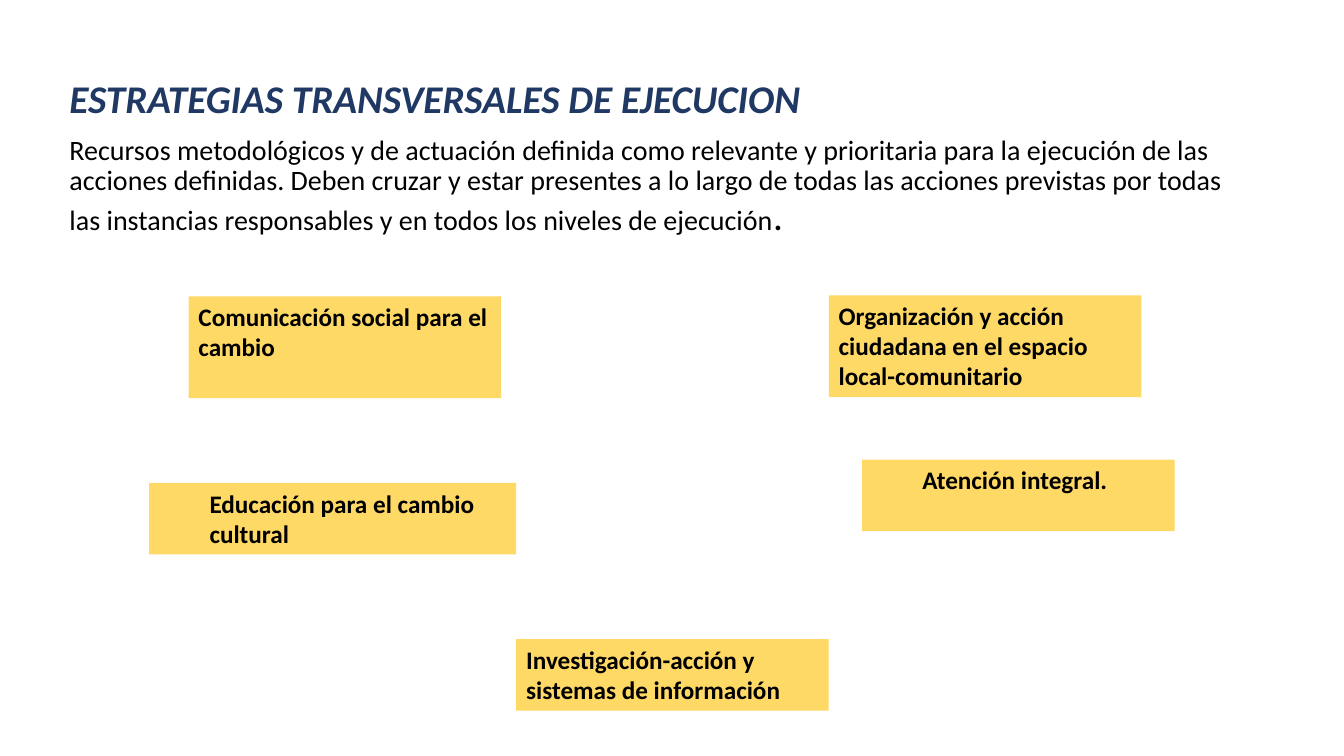
from pptx import Presentation
from pptx.dml.color import RGBColor
from pptx.enum.shapes import MSO_SHAPE
from pptx.enum.text import MSO_ANCHOR, PP_ALIGN
from pptx.util import Pt

PX = 9144  # EMU per px, 100 px to the inch
INDENT = 50
COLORS = {"title": "203864", "text": "000000", "box": "FFD966"}

TITLE = "ESTRATEGIAS TRANSVERSALES DE EJECUCION"
INTRO = (
    "Recursos metodológicos y de actuación definida como relevante y "
    "prioritaria para la ejecución de las acciones definidas. Deben cruzar y "
    "estar presentes a lo largo de todas las acciones previstas por todas las "
    "instancias responsables y en todos los niveles de ejecución"
)
# left, top, width, height, indent, text
BOXES = [
    (187, 294, 310, 101, 0, "Comunicación social para el cambio"),
    (822, 293, 310, 101, 0,
     "Organización y acción ciudadana en el espacio local-comunitario"),
    (148, 479, 364, 71, INDENT, "Educación para el cambio cultural"),
    (512, 634, 310, 71, 0, "Investigación-acción y sistemas de información"),
    (855, 456, 310, 71, INDENT, "Atención integral."),
]


class Deck:
    def __init__(self, width, height, face):
        self.prs = Presentation()
        self.prs.slide_width = width * PX
        self.prs.slide_height = height * PX
        self.slide = self.prs.slides.add_slide(self.prs.slide_layouts[6])
        self.face = face

    def style(self, para, size, color="text", bold=False, italic=False):
        font = para.font
        font.name, font.size = self.face, Pt(size)
        font.bold, font.italic = bold, italic
        font.color.rgb = RGBColor.from_string(COLORS[color])

    def intro(self, area, title, text, stop):
        """Add the heading and its paragraph, closed by a larger full stop."""
        box = self.slide.shapes.add_textbox(*(n * PX for n in area))
        frame = box.text_frame
        frame.word_wrap = True
        head, body = frame.paragraphs[0], frame.add_paragraph()
        head.text = title
        self.style(head, 28, "title", bold=True, italic=True)
        body.add_run().text = text
        self.style(body, 20)
        end = body.add_run()
        end.text = stop
        end.font.size = Pt(28)
        for para in (head, body):
            para.line_spacing = 0.9
            para.space_before = Pt(10)

    def box(self, area, indent, text):
        shape = self.slide.shapes.add_shape(
            MSO_SHAPE.RECTANGLE, *(n * PX for n in area))
        shape.shadow.inherit = False
        shape.fill.solid()
        shape.fill.fore_color.rgb = RGBColor.from_string(COLORS["box"])
        shape.line.fill.background()
        frame = shape.text_frame
        frame.word_wrap = True
        frame.vertical_anchor = MSO_ANCHOR.TOP
        para = frame.paragraphs[0]
        para.text = text
        para.alignment = PP_ALIGN.LEFT
        self.style(para, 18, bold=True)
        if indent:
            para.level = 1
            para._p.get_or_add_pPr().set("marL", str(indent * PX))


def main():
    deck = Deck(1333, 750, "Calibri")
    deck.intro((59, 74, 1165, 181), TITLE, INTRO, ".")
    for *area, indent, text in BOXES:
        deck.box(area, indent, text)
    deck.prs.save("out.pptx")


if __name__ == "__main__":
    main()
